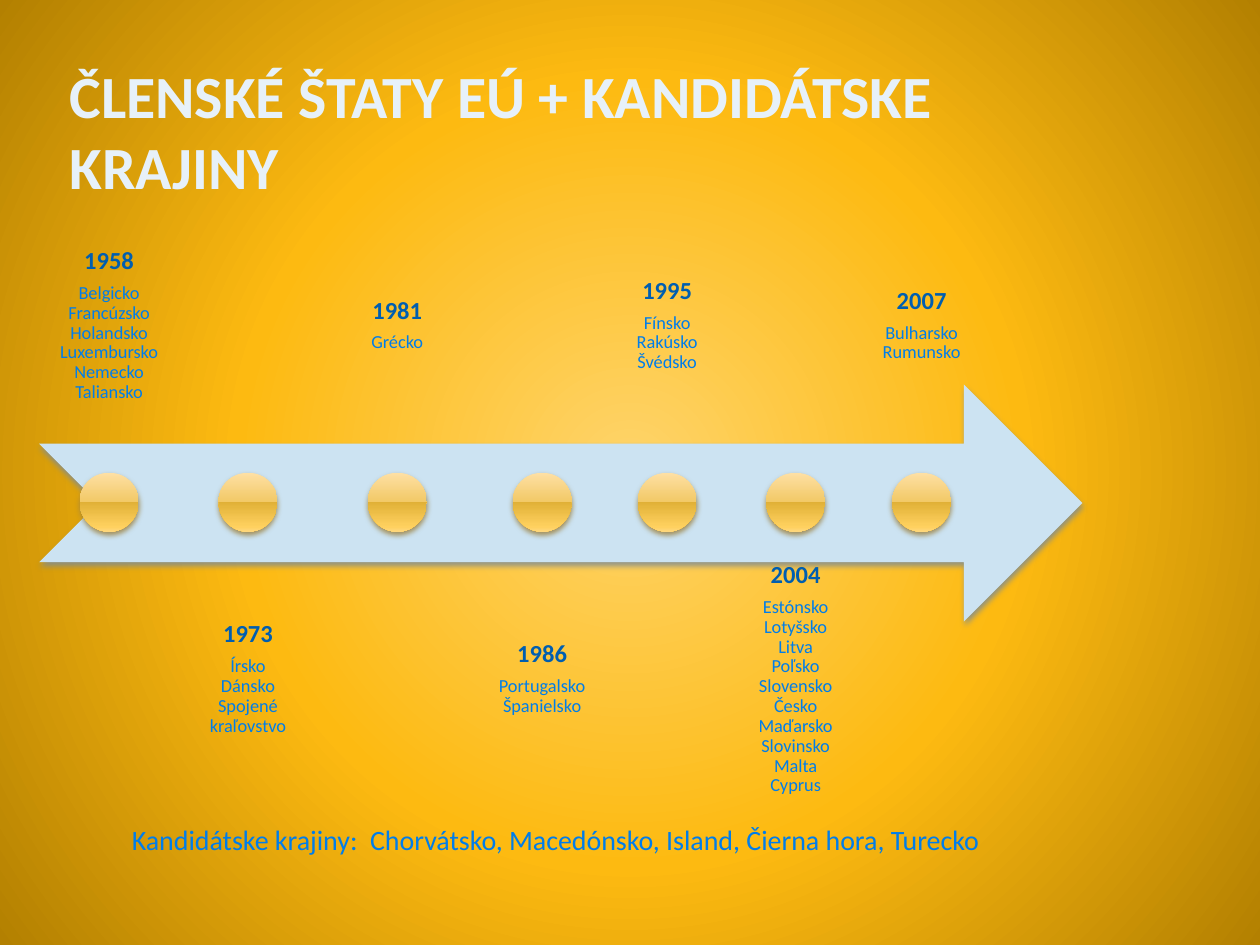
import pptx
import pptx.util
import pptx.dml.color
import pptx.enum.shapes
import pptx.enum.text
import pptx.oxml
import pptx.oxml.ns

Cm = pptx.util.Cm
Pt = pptx.util.Pt
Shape = pptx.enum.shapes.MSO_SHAPE
Align = pptx.enum.text.PP_ALIGN
Anchor = pptx.enum.text.MSO_ANCHOR
NS = pptx.oxml.ns.nsdecls("a")

HUES = {
    "title": "E7F1F9",
    "year": "005EB0",
    "text": "007DEA",
    "arrow": "CCE3F2",
    "shade": "7E8C95",
    "ball shade": "9D8342",
}
BACK = [(0, "FED46B"), (50, "FDBA11"), (100, "B38001")]
BALL = [(0, "FEE0A4"), (49, "F2C967"), (49, "E0B036"), (92, "FFD15F"), (100, "FFD87F")]
DOWN = '<a:lin ang="5400000" scaled="0"/>'
ROUND = '<a:path path="circle"><a:fillToRect l="50000" t="50000" r="50000" b="50000"/></a:path>'

STEPS = [
    ("1958", 2.2, 2.79, "Belgicko\nFrancúzsko\nHolandsko\nLuxembursko\nNemecko\nTaliansko"),
    ("1973", 5, 2.59, "Írsko\nDánsko\nSpojené kraľovstvo"),
    ("1981", 8.01, 3.25, "Grécko"),
    ("1986", 10.93, 2.39, "Portugalsko\nŠpanielsko"),
    ("1995", 13.45, 2.44, "Fínsko\nRakúsko\nŠvédsko"),
    ("2004", 16.04, 2.59, "Estónsko\nLotyšsko\nLitva\nPoľsko\nSlovensko\nČesko\n"
                          "Maďarsko\nSlovinsko\nMalta\nCyprus"),
    ("2007", 18.58, 2.29, "Bulharsko\nRumunsko"),
]
HIGH = 4.78
TOPS = (4.17, 11.3)
SIZE = 1.19


def write(para, text, size, hue, bold=False, align=Align.CENTER, lead=1, after=0):
    para.text = text
    para.alignment = align
    para.line_spacing = lead
    para.space_before = Pt(0)
    para.space_after = Pt(after)
    for run in para.runs:
        run.font.name = "Calibri"
        run.font.size = Pt(size)
        run.font.bold = bold
        run.font.color.rgb = pptx.dml.color.RGBColor.from_string(HUES[hue])


def blend(fill, owner, stops, way):
    fill.solid()
    old = owner.find(pptx.oxml.ns.qn("a:solidFill"))
    marks = "".join(f'<a:gs pos="{at * 1000}"><a:srgbClr val="{hue}"/></a:gs>'
                    for at, hue in stops)
    owner.replace(old, pptx.oxml.parse_xml(
        f'<a:gradFill {NS} rotWithShape="1"><a:gsLst>{marks}</a:gsLst>{way}</a:gradFill>'))


class Deck:
    def __init__(self):
        self.show = pptx.Presentation()
        self.show.slide_width = Cm(25.4)
        self.show.slide_height = Cm(19.05)
        self.slide = self.show.slides.add_slide(self.show.slide_layouts[5])

    def back(self):
        fill = self.slide.background.fill
        fill.solid()
        owner = self.slide.element.find(".//" + pptx.oxml.ns.qn("p:bgPr"))
        blend(fill, owner, BACK, ROUND)

    def title(self, text, x, y, w, h):
        box = self.slide.shapes.title
        box.left, box.top, box.width, box.height = Cm(x), Cm(y), Cm(w), Cm(h)
        frame = self.frame(box, Anchor.BOTTOM, 0.13, 0)
        write(frame.paragraphs[0], text, 34.2, "title", bold=True, align=Align.LEFT)

    def frame(self, box, anchor, side, edge):
        frame = box.text_frame
        frame.word_wrap = True
        frame.auto_size = pptx.enum.text.MSO_AUTO_SIZE.NONE
        frame.vertical_anchor = anchor
        frame.margin_left = frame.margin_right = Cm(side)
        frame.margin_top = frame.margin_bottom = Cm(edge)
        return frame

    def text(self, x, y, w, h, anchor=Anchor.TOP, side=0.25, edge=0.13):
        box = self.slide.shapes.add_textbox(Cm(x), Cm(y), Cm(w), Cm(h))
        return self.frame(box, anchor, side, edge)

    def shape(self, kind, x, y, w, h, shade):
        form = self.slide.shapes.add_shape(kind, Cm(x), Cm(y), Cm(w), Cm(h))
        form.line.fill.background()
        form.shadow.inherit = False
        glow = form.element.spPr.find(pptx.oxml.ns.qn("a:effectLst"))
        glow.append(pptx.oxml.parse_xml(
            f'<a:outerShdw {NS} blurRad="{Pt(3.1)}" dist="{Pt(2)}" dir="5400000" '
            f'rotWithShape="0"><a:srgbClr val="{HUES[shade]}"><a:alpha val="83000"/>'
            '</a:srgbClr></a:outerShdw>'))
        return form

    def arrow(self, x, y, w, h):
        form = self.shape(Shape.NOTCHED_RIGHT_ARROW, x, y, w, h, "shade")
        form.fill.solid()
        form.fill.fore_color.rgb = pptx.dml.color.RGBColor.from_string(HUES["arrow"])

    def ball(self, mid, y):
        form = self.shape(Shape.OVAL, mid - SIZE / 2, y, SIZE, SIZE, "ball shade")
        blend(form.fill, form.element.spPr, BALL, DOWN)

    def label(self, year, lands, mid, y, w):
        frame = self.text(mid - w / 2, y, w, HIGH, Anchor.MIDDLE, 0.28, 0.28)
        write(frame.paragraphs[0], year, 14, "year", bold=True, lead=0.9, after=5)
        write(frame.add_paragraph(), lands, 10.5, "text", lead=0.9)


def main():
    deck = Deck()
    deck.back()
    deck.title("ČLENSKÉ ŠTATY EÚ + KANDIDÁTSKE KRAJINY", 1.27, 0.89, 20.12, 3.18)
    deck.arrow(0.79, 7.75, 21.03, HIGH)
    for num, (year, mid, wide, lands) in enumerate(STEPS):
        deck.label(year, lands, mid, TOPS[num % 2], wide)
        deck.ball(mid, 9.53)
    note = deck.text(1.78, 16.46, 18.85, 0.94)
    write(note.paragraphs[0],
          "Kandidátske krajiny:  Chorvátsko, Macedónsko, Island, Čierna hora, Turecko",
          16, "text")
    deck.show.save("out.pptx")


if __name__ == "__main__":
    main()
